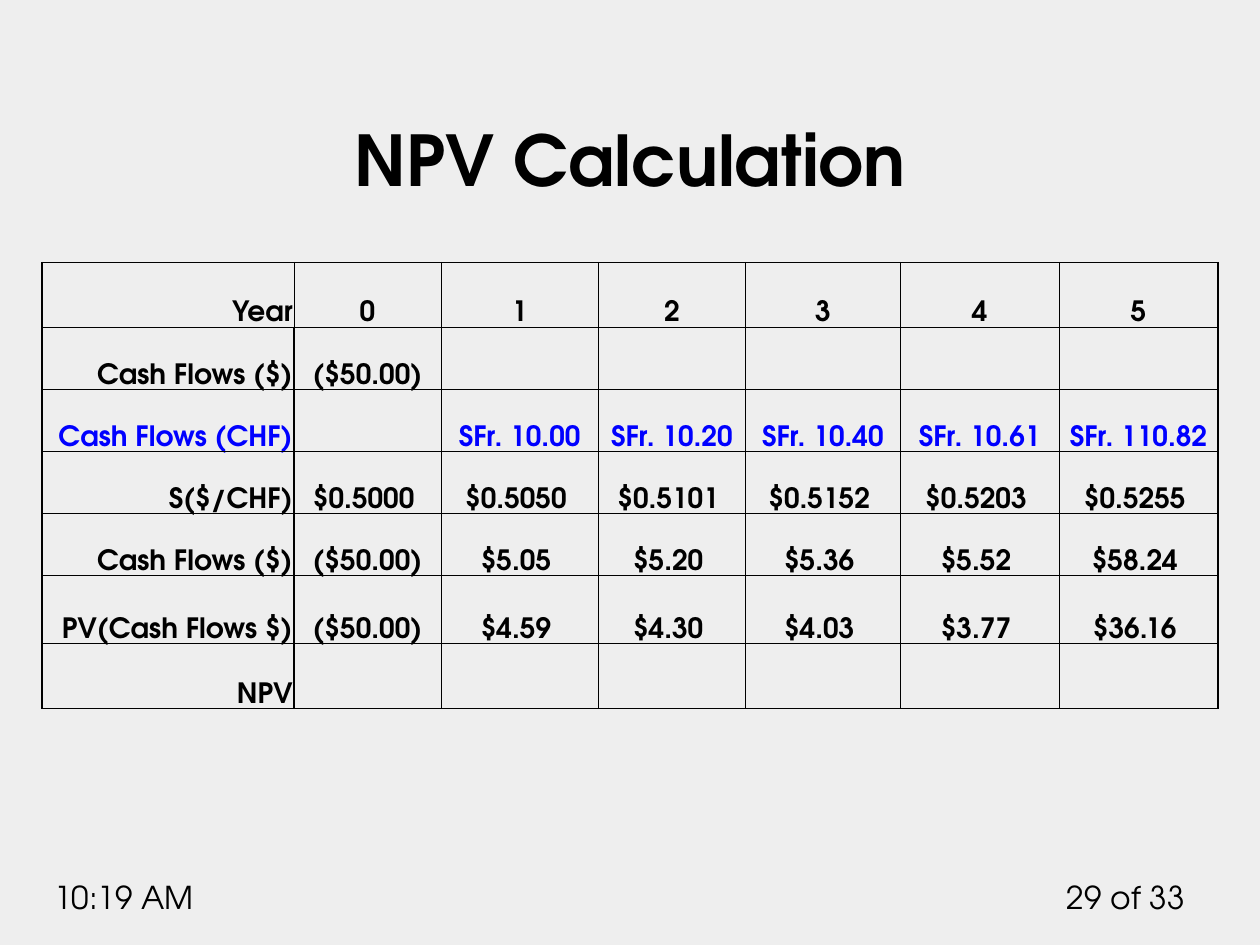
from dataclasses import dataclass

from lxml.etree import SubElement
from pptx import Presentation
from pptx.dml.color import RGBColor
from pptx.enum.text import MSO_ANCHOR, PP_ALIGN
from pptx.oxml.ns import qn
from pptx.slide import Slide
from pptx.table import Table, _Cell
from pptx.text.text import _Paragraph
from pptx.util import Pt


@dataclass(frozen=True)
class Theme:
    font: str = "TeX Gyre Adventor"
    background: RGBColor = RGBColor(0xEE, 0xEE, 0xEE)
    ink: RGBColor = RGBColor(0, 0, 0)
    franc: RGBColor = RGBColor(0, 0, 0xFF)
    title_size: float = 40
    table_size: float = 16
    footer_size: float = 18
    thin: float = 0.5
    thick: float = 1


@dataclass(frozen=True)
class CashRow:
    label: str
    values: tuple[str, ...]
    height: float
    color: RGBColor


@dataclass(frozen=True)
class Footer:
    text: str
    left: float
    width: float
    alignment: PP_ALIGN


THEME = Theme()
EMPTY = ("",) * 5
COLUMN_WIDTHS = (144, 84, 90, 84, 88.5, 90.75, 90.75)
ROWS = (
    CashRow("Year", ("0", "1", "2", "3", "4", "5"), 37, THEME.ink),
    CashRow("Cash Flows ($)", ("($50.00)", *EMPTY), 35.5, THEME.ink),
    CashRow("Cash Flows (CHF)", ("", "SFr. 10.00", "SFr. 10.20", "SFr. 10.40",
                                 "SFr. 10.61", "SFr. 110.82"), 35.5, THEME.franc),
    CashRow("S($/CHF)", ("$0.5000", "$0.5050", "$0.5101", "$0.5152", "$0.5203", "$0.5255"),
            35.5, THEME.ink),
    CashRow("Cash Flows ($)", ("($50.00)", "$5.05", "$5.20", "$5.36", "$5.52", "$58.24"),
            35.5, THEME.ink),
    CashRow("PV(Cash Flows $)", ("($50.00)", "$4.59", "$4.30", "$4.03", "$3.77", "$36.16"),
            39, THEME.ink),
    CashRow("NPV", ("", *EMPTY), 37, THEME.ink),
)
FOOTERS = (
    Footer("29 of 33", 600, 84, PP_ALIGN.RIGHT),
    Footer("10:19 AM", 24, 114, PP_ALIGN.LEFT),
)


def style_paragraph(paragraph: _Paragraph, size: float, color: RGBColor,
                    alignment: PP_ALIGN, bold: bool = False) -> None:
    """Set the font and alignment of a paragraph."""
    paragraph.alignment = alignment
    paragraph.font.name = THEME.font
    paragraph.font.size = Pt(size)
    paragraph.font.bold = bold
    paragraph.font.color.rgb = color


def draw_title(slide: Slide, text: str) -> None:
    """Fill and place the title placeholder."""
    title = slide.shapes.title
    title.left, title.top, title.width, title.height = Pt(36), Pt(28), Pt(648), Pt(90)
    title.text_frame.text = text
    title.text_frame.vertical_anchor = MSO_ANCHOR.BOTTOM
    style_paragraph(title.text_frame.paragraphs[0], THEME.title_size, THEME.ink,
                    PP_ALIGN.CENTER, bold=True)


def draw_footer(slide: Slide, footer: Footer) -> None:
    """Add one footer text at the bottom of the slide."""
    box = slide.shapes.add_textbox(Pt(footer.left), Pt(498), Pt(footer.width), Pt(29))
    box.text_frame.word_wrap = True
    box.text_frame.text = footer.text
    style_paragraph(box.text_frame.paragraphs[0], THEME.footer_size, THEME.ink, footer.alignment)


def draw_borders(cell: _Cell, row: int, column: int) -> None:
    """Rule a cell: thick on the frame and beside the headings, thin elsewhere."""
    last_row, last_column = len(ROWS) - 1, len(COLUMN_WIDTHS) - 1
    thick_edges = {
        "a:lnL": column == 0 or (column == 1 and row > 0),
        "a:lnR": column == last_column or (column == 0 and row > 0),
        "a:lnT": row == 0 or (row == 1 and column > 0),
        "a:lnB": row == last_row or (row == 0 and column > 0),
    }
    properties = cell._tc.get_or_add_tcPr()
    for tag, is_thick in thick_edges.items():
        width = THEME.thick if is_thick else THEME.thin
        line = SubElement(properties, qn(tag), w=str(Pt(width)))
        fill = SubElement(line, qn("a:solidFill"))
        SubElement(fill, qn("a:srgbClr"), val=str(THEME.ink))


def fill_cell(table: Table, row: int, column: int, text: str) -> None:
    """Write, align and rule one table cell."""
    cell = table.cell(row, column)
    draw_borders(cell, row, column)
    cell.fill.background()
    cell.vertical_anchor = MSO_ANCHOR.BOTTOM
    cell.margin_left = cell.margin_top = Pt(0.75)
    cell.margin_right = Pt(5 if text.startswith("$") else 0.75)
    cell.margin_bottom = Pt(0)
    cell.text = text
    alignment = PP_ALIGN.CENTER if column else PP_ALIGN.RIGHT
    style_paragraph(cell.text_frame.paragraphs[0], THEME.table_size, ROWS[row].color,
                    alignment, bold=True)


def draw_table(slide: Slide) -> None:
    """Add the cash flow table."""
    height = sum(row.height for row in ROWS)
    frame = slide.shapes.add_table(len(ROWS), len(COLUMN_WIDTHS), Pt(24), Pt(150),
                                   Pt(sum(COLUMN_WIDTHS)), Pt(height))
    table = frame.table
    table.first_row = table.horz_banding = False
    for column, width in zip(table.columns, COLUMN_WIDTHS):
        column.width = Pt(width)
    for index, row in enumerate(ROWS):
        table.rows[index].height = Pt(row.height)
        for column, text in enumerate((row.label, *row.values)):
            fill_cell(table, index, column, text)


def main() -> None:
    """Build and save the slide."""
    presentation = Presentation()
    presentation.slide_width, presentation.slide_height = Pt(720), Pt(540)
    slide = presentation.slides.add_slide(presentation.slide_layouts[5])
    slide.background.fill.solid()
    slide.background.fill.fore_color.rgb = THEME.background
    for footer in FOOTERS:
        draw_footer(slide, footer)
    draw_title(slide, "NPV Calculation")
    draw_table(slide)
    presentation.save("out.pptx")


if __name__ == "__main__":
    main()
